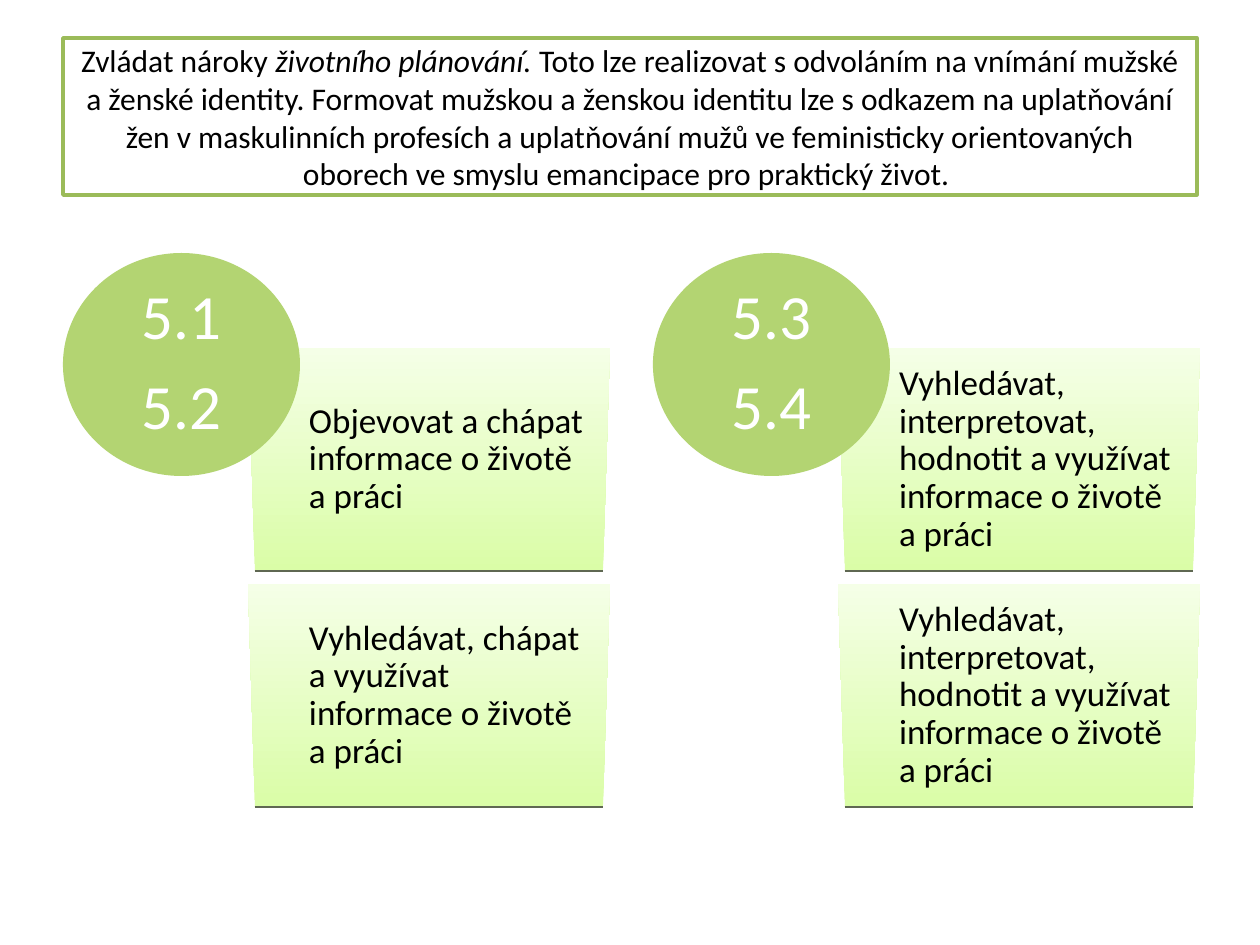
"""Builds a slide on life planning: a framed statement above two numbered columns."""
from pptx import Presentation
from pptx.dml.color import RGBColor as RGB
from pptx.enum.shapes import MSO_CONNECTOR as CONN, MSO_SHAPE as SHAPE
from pptx.enum.text import MSO_ANCHOR as ANCHOR, PP_ALIGN as ALIGN
from pptx.oxml.ns import qn
from pptx.util import Pt

STATEMENT = [
    ("Zvládat nároky ", False),
    ("životního plánování.", True),
    (" Toto lze realizovat s odvoláním na vnímání mužské a ženské identity. "
     "Formovat mužskou a ženskou identitu lze s odkazem na uplatňování žen "
     "v maskulinních profesích a uplatňování mužů ve feministicky orientovaných "
     "oborech ve smyslu emancipace pro praktický život. ", False),
]
COMPARE = "Vyhledávat, interpretovat, hodnotit a využívat informace o životě a práci"
COLUMNS = [
    (["5.1", "5.2"], ["Objevovat a chápat informace o životě a práci",
                      "Vyhledávat, chápat a využívat informace o životě a práci"]),
    (["5.3", "5.4"], [COMPARE, COMPARE]),
]
THEME = dict(font="Calibri", title=18, body=20, number=36, ink="000000", paper="FFFFFF",
             frame="9BBB59", disc="B3D472", top="F5FFE7", bottom="DAFDA7", edge="5F6852")

PX = 914400 // 126
FRAME = (63, 38, 1134, 157)
DISC = (63, 253, 237, 223)
CARD = (248, 348, 362, 223)
COLUMN_STEP, ROW_STEP, TAPER = 590, 236, 7


def px(*values):
    return [v * PX for v in values]


def color(name):
    return RGB.from_string(THEME[name])


def write(sp, paragraphs, size, ink="ink", align=ALIGN.CENTER, spacing=None, after=0,
          insets=(0, 0, 0, 0)):
    tf = sp.text_frame
    tf.word_wrap = True
    tf.vertical_anchor = ANCHOR.MIDDLE
    tf.margin_left, tf.margin_top, tf.margin_right, tf.margin_bottom = px(*insets)
    for i, runs in enumerate(paragraphs):
        p = tf.add_paragraph() if i else tf.paragraphs[0]
        p.alignment, p.line_spacing, p.space_after = align, spacing, Pt(after)
        for text, italic in runs:
            r = p.add_run()
            r.text = text
            r.font.name, r.font.size, r.font.italic = THEME["font"], Pt(THEME[size]), italic
            r.font.color.rgb = color(ink)


def add_solid(shapes, kind, box, fill):
    sp = shapes.add_shape(kind, *px(*box))
    sp.shadow.inherit = False
    sp.fill.solid()
    sp.fill.fore_color.rgb = color(fill)
    sp.line.fill.background()
    return sp


def add_card(shapes, x, y, text):
    w, h = CARD[2:]
    left, right, base = x + TAPER, x + w - TAPER, y + h
    builder = shapes.build_freeform(x, y, scale=PX)
    builder.add_line_segments([(x + w, y), (right, base), (left, base)])
    sp = builder.convert_to_shape()
    sp.shadow.inherit = False
    sp.line.fill.background()
    sp.fill.gradient()
    sp.fill.gradient_angle = 90
    for stop, name, position in zip(sp.fill.gradient_stops, ("bottom", "top"), (0, 1)):
        stop.color.rgb, stop.position = color(name), position
    write(sp, [[(text, False)]], "body", align=ALIGN.LEFT, spacing=0.9,
          insets=(61, 20, 24, 20))
    edge = shapes.add_connector(CONN.STRAIGHT, *px(left, base, right, base))
    edge.line.color.rgb, edge.line.width = color("edge"), Pt(1.5)
    sp_pr = edge._element.spPr
    sp_pr.append(sp_pr.makeelement(qn("a:effectLst"), {}))


def main():
    prs = Presentation()
    prs.slide_width, prs.slide_height = px(1260, 945)
    s = prs.slides.add_slide(prs.slide_layouts[6])
    frame = add_solid(s.shapes, SHAPE.RECTANGLE, FRAME, "paper")
    frame.line.color.rgb, frame.line.width = color("frame"), Pt(2)
    write(frame, [STATEMENT], "title", insets=(12, 6, 12, 6))
    for col, (numbers, cards) in enumerate(COLUMNS):
        shift = col * COLUMN_STEP
        for row, text in enumerate(cards):
            add_card(s.shapes, CARD[0] + shift, CARD[1] + row * ROW_STEP, text)
        disc = add_solid(s.shapes, SHAPE.OVAL, (DISC[0] + shift, *DISC[1:]), "disc")
        write(disc, [[(n, False)] for n in numbers], "number", ink="paper", spacing=0.9,
              after=12.6)
    prs.save("out.pptx")


if __name__ == "__main__":
    main()
